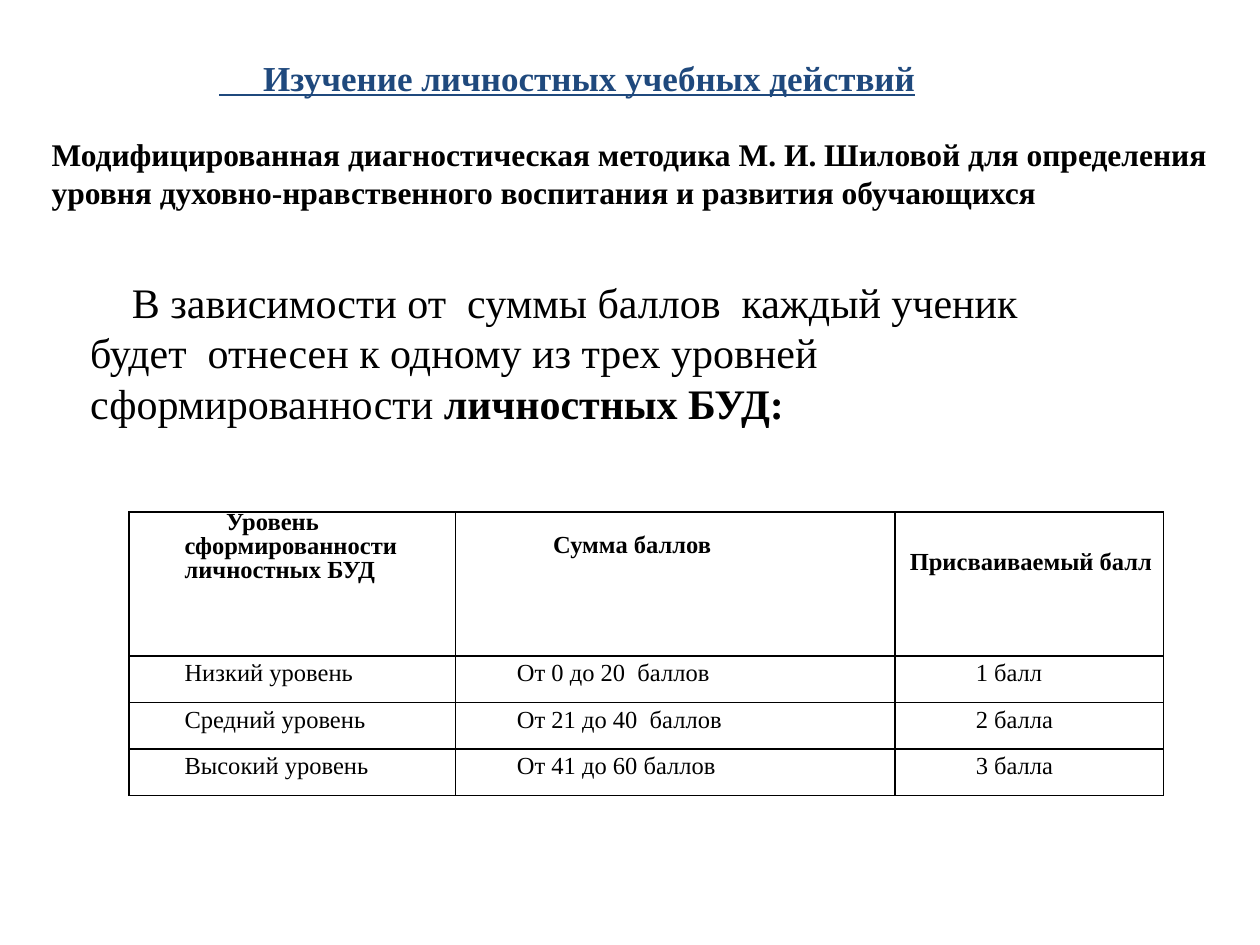
from pptx import Presentation
from pptx.dml.color import RGBColor
from pptx.enum.text import MSO_ANCHOR, MSO_AUTO_SIZE, PP_ALIGN
from pptx.oxml import parse_xml
from pptx.oxml.ns import nsdecls
from pptx.util import Cm, Pt

FONT = "Times New Roman"
BLACK = "000000"
WHITE = "FFFFFF"
NAVY = "1F497D"

COLUMN_WIDTHS = [6.58, 8.86, 5.41]
ROW_HEIGHTS = [2.9, 0.94, 0.94, 0.94]
COLUMN_INDENTS = [1.12, 1.24, 1.63]
ROWS = [
    ["Уровень сформированности личностных БУД", "Сумма баллов", "Присваиваемый балл"],
    ["Низкий уровень", "От 0 до 20  баллов", "1 балл"],
    ["Средний уровень", "От 21 до 40  баллов", "2 балла"],
    ["Высокий уровень", "От 41 до 60 баллов", "3 балла"],
]


def color(value):
    return RGBColor.from_string(value)


def format_span(span, size, bold=False, fill=BLACK):
    span.font.name = FONT
    span.font.size = Pt(size)
    span.font.bold = bold
    span.font.color.rgb = color(fill)


def set_indent(para, left, first=0):
    properties = para._p.get_or_add_pPr()
    properties.set("marL", str(Cm(left)))
    properties.set("indent", str(Cm(first)))


def set_borders(cell):
    properties = cell._tc.get_or_add_tcPr()
    for position, side in enumerate(("lnL", "lnR", "lnT", "lnB")):
        line = parse_xml(
            f'<a:{side} {nsdecls("a")} w="{Pt(1)}"><a:solidFill>'
            f'<a:srgbClr val="{BLACK}"/></a:solidFill></a:{side}>'
        )
        properties.insert(position, line)


def add_title(page, left, top, width, height):
    title = page.shapes.title
    title.left, title.top, title.width, title.height = map(Cm, (left, top, width, height))
    title.fill.solid()
    title.fill.fore_color.rgb = color(WHITE)
    frame = title.text_frame
    frame.text = "     Изучение личностных учебных действий"
    frame.word_wrap = False
    frame.auto_size = MSO_AUTO_SIZE.SHAPE_TO_FIT_TEXT
    frame.vertical_anchor = MSO_ANCHOR.MIDDLE
    para = frame.paragraphs[0]
    para.alignment = PP_ALIGN.LEFT
    format_span(para.runs[0], 20, True, NAVY)
    para.runs[0].font.underline = True


def add_method(page, left, top, width, height):
    box = page.shapes.add_textbox(*map(Cm, (left, top, width, height)))
    frame = box.text_frame
    frame.word_wrap = False
    frame.text = (
        "Модифицированная диагностическая методика М. И. Шиловой для определения\n"
        "уровня духовно-нравственного воспитания и развития обучающихся"
    )
    for para in frame.paragraphs:
        format_span(para.runs[0], 18, True)


def add_explanation(page, left, top, width, height):
    box = page.shapes.add_textbox(*map(Cm, (left, top, width, height)))
    frame = box.text_frame
    frame.word_wrap = True
    para = frame.paragraphs[0]
    set_indent(para, 0, 0.84)
    para.text = (
        "В зависимости от  суммы баллов  каждый ученик будет  отнесен "
        "к одному из трех уровней  сформированности"
    )
    format_span(para.runs[0], 24)
    span = para.add_run()
    span.text = " личностных БУД:"
    format_span(span, 24, True)


def format_header(cells):
    level, total, score = cells
    para = level.text_frame.paragraphs[0]
    set_indent(para, 1.12, 0.84)
    para.line_spacing = Pt(13.7)
    total.margin_top = Cm(0.47)
    total.margin_right = Cm(1.73)
    para = total.text_frame.paragraphs[0]
    para.alignment = PP_ALIGN.CENTER
    para.line_spacing = Pt(13.4)
    score.margin_top = Cm(0.65)
    set_indent(score.text_frame.paragraphs[0], 0.3)


def add_levels_table(page, left, top):
    size = (sum(COLUMN_WIDTHS), sum(ROW_HEIGHTS))
    frame = page.shapes.add_table(
        len(ROWS), len(COLUMN_WIDTHS), *map(Cm, (left, top, *size))
    )
    table = frame.table
    for column, width in zip(table.columns, COLUMN_WIDTHS):
        column.width = Cm(width)
    for row_index, (row, height) in enumerate(zip(table.rows, ROW_HEIGHTS)):
        row.height = Cm(height)
        for cell, text, indent in zip(row.cells, ROWS[row_index], COLUMN_INDENTS):
            cell.margin_left = cell.margin_right = 0
            cell.margin_top = cell.margin_bottom = 0
            cell.fill.solid()
            cell.fill.fore_color.rgb = color(WHITE)
            set_borders(cell)
            para = cell.text_frame.paragraphs[0]
            para.text = text
            para.line_spacing = 1.15
            set_indent(para, indent if row_index else 0)
            format_span(para.runs[0], 14, row_index == 0)
    format_header(table.rows[0].cells)


def main():
    deck = Presentation()
    deck.slide_width, deck.slide_height = Cm(25.4), Cm(19.05)
    page = deck.slides.add_slide(deck.slide_layouts[5])
    add_title(page, 4.17, 1, 14.66, 1.12)
    add_method(page, 0.79, 2.6, 24.05, 1.8)
    add_levels_table(page, 2.6, 10.32)
    add_explanation(page, 1.57, 5.45, 20.24, 4.6)
    deck.save("out.pptx")


if __name__ == "__main__":
    main()
